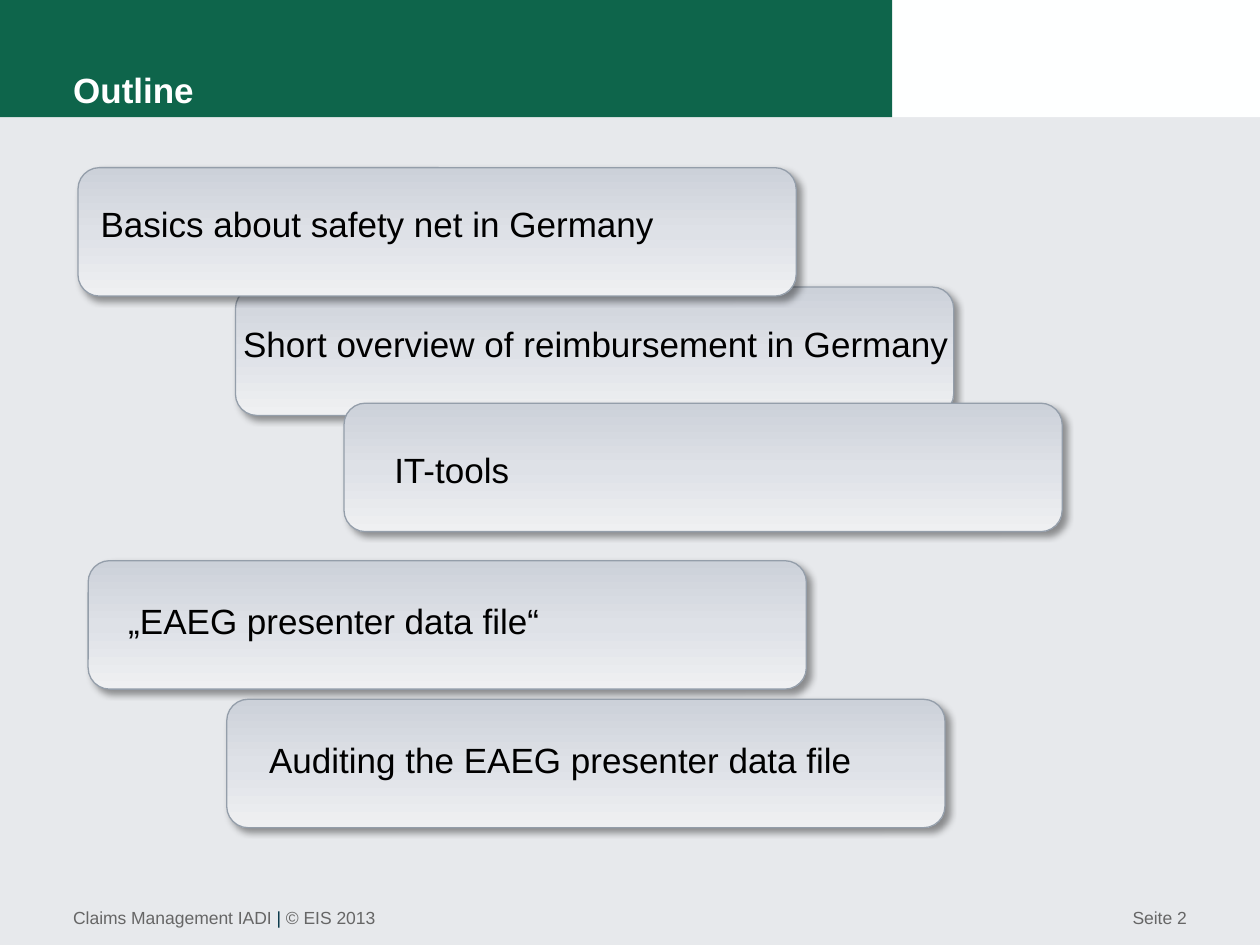
from copy import deepcopy

from lxml import etree
from pptx import Presentation
from pptx.dml.color import RGBColor
from pptx.enum.shapes import MSO_SHAPE
from pptx.enum.text import MSO_ANCHOR, PP_ALIGN
from pptx.oxml.ns import qn
from pptx.util import Pt

RECT, ROUND = MSO_SHAPE.RECTANGLE, MSO_SHAPE.ROUNDED_RECTANGLE
TOP, BOTTOM = MSO_ANCHOR.TOP, MSO_ANCHOR.BOTTOM
LEFT, MID, RIGHT = PP_ALIGN.LEFT, PP_ALIGN.CENTER, PP_ALIGN.RIGHT

HEX = {
    "back": "E7E9EC", "white": "FEFFFF", "green": "0E654B", "title": "FFFFFF",
    "grey": "666666", "bar": "003142", "text": "000000", "edge": "949EAA",
    "shade": "000000", "high": "CCD1D9", "mid": "DEE1E7", "low": "EFF0F2",
}
FONT = "Arial"
WIDE, HIGH = 720, 540
HEAD = 67
EDGE = 41.8
CARD = (410.4, 73.4)
LINE = 31.7
PAD = (7.2, 3.6)
STOPS = [(0, "high"), (0.5, "mid"), (1, "low")]

# card left and top, text left, top and width, alignment, wording; back to front
CARDS = [
    ((134.6, 164), (101.5, 180.9, 478), MID,
     "Short overview of reimbursement in Germany"),
    ((44.6, 95.8), (50.4, 112.3, 371.5), LEFT,
     "Basics about safety net in Germany"),
    ((196.6, 230.4), (218.2, 252.7, 80.6), LEFT, "IT-tools"),
    ((50.4, 320.4), (66.2, 339.1, 251.3), LEFT, "„EAEG presenter data file“"),
    ((129.6, 399.6), (145.4, 418.3, 349.9), MID,
     "Auditing the EAEG presenter data file"),
]
TITLE = [("Outline", "title")]
FOOT = [("Claims Management IADI ", "grey"), ("| ", "bar"),
        ("© EIS 2013", "grey")]
PAGE = [("Seite 2", "grey")]


def rgb(name):
    return RGBColor.from_string(HEX[name])


def add_band(shapes, wide, tint):
    band = shapes.add_shape(RECT, 0, 0, Pt(wide), Pt(HEAD))
    band.shadow.inherit = False
    band.fill.solid()
    band.fill.fore_color.rgb = rgb(tint)
    band.line.fill.background()


def add_text(shapes, box, runs, size, align=LEFT, pad=(0, 0), anchor=TOP,
             bold=False, wrap=True):
    frame = shapes.add_textbox(*map(Pt, box)).text_frame
    frame.word_wrap = wrap
    frame.vertical_anchor = anchor
    frame.margin_left = frame.margin_right = Pt(pad[0])
    frame.margin_top = frame.margin_bottom = Pt(pad[1])
    para = frame.paragraphs[0]
    para.alignment = align
    for words, tint in runs:
        run = para.add_run()
        run.text = words
        run.font.name = FONT
        run.font.size = Pt(size)
        run.font.bold = bold
        run.font.color.rgb = rgb(tint)
    return para


def add_shade(shape):
    """Give the shape a soft shadow to the lower right."""
    shape.shadow.inherit = False
    effect = shape._element.spPr.find(qn("a:effectLst"))
    outer = etree.SubElement(
        effect, qn("a:outerShdw"), blurRad=str(Pt(4)), dist=str(Pt(3)),
        dir="2700000", algn="tl", rotWithShape="0")
    color = etree.SubElement(outer, qn("a:srgbClr"), val=HEX["shade"])
    etree.SubElement(color, qn("a:alpha"), val="40000")


def add_card(shapes, spot):
    card = shapes.add_shape(ROUND, *map(Pt, spot + CARD))
    card.fill.gradient()
    card.fill.gradient_angle = 270
    stops = card._element.spPr.find(".//" + qn("a:gsLst"))
    stops.insert(1, deepcopy(stops[0]))
    for stop, (place, tint) in zip(card.fill.gradient_stops, STOPS):
        stop.position = place
        stop.color.rgb = rgb(tint)
    card.line.color.rgb = rgb("edge")
    card.line.width = Pt(0.75)
    add_shade(card)


def main():
    deck = Presentation()
    deck.slide_width, deck.slide_height = Pt(WIDE), Pt(HIGH)
    slide = deck.slides.add_slide(deck.slide_layouts[6])
    slide.background.fill.solid()
    slide.background.fill.fore_color.rgb = rgb("back")
    shapes = slide.shapes

    add_band(shapes, WIDE, "white")
    add_band(shapes, 509.8, "green")
    add_text(shapes, (WIDE - EDGE - 252, 518.4, 252, 21.6), PAGE, 10, RIGHT)
    add_text(shapes, (EDGE, 518.4, 432, 21.6), FOOT, 10)
    title = add_text(shapes, (EDGE, 0, 467.3, 63.4), TITLE, 20,
                     anchor=BOTTOM, bold=True)
    title.line_spacing = Pt(24)

    for spot, (left, top, wide), align, words in CARDS:
        group = shapes.add_group_shape().shapes
        add_card(group, spot)
        add_text(group, (left, top, wide, LINE), [(words, "text")], 20,
                 align, PAD, wrap=wide > CARD[0] or spot[1] < 100)

    deck.save("out.pptx")


if __name__ == "__main__":
    main()
